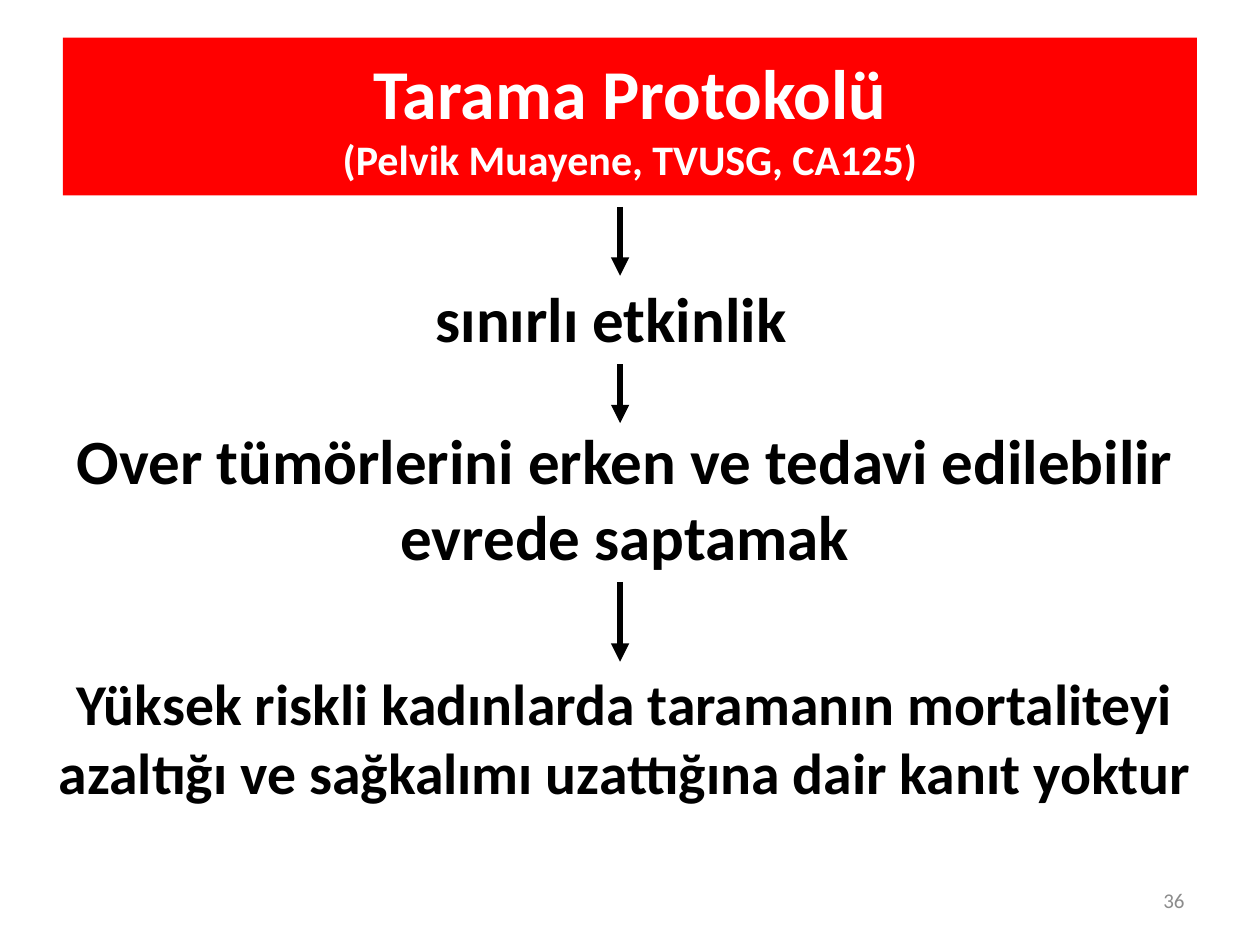
"""Build the screening protocol slide: a red title and three statements linked by arrows."""
from lxml.etree import SubElement
from pptx import Presentation
from pptx.dml.color import RGBColor
from pptx.enum.shapes import MSO_CONNECTOR, MSO_SHAPE
from pptx.enum.text import MSO_ANCHOR, PP_ALIGN
from pptx.oxml.ns import qn
from pptx.util import Cm, Pt


def color(value):
    return RGBColor.from_string(value)


def write(shape, *lines, sizes, font_color="000000", align=PP_ALIGN.CENTER, anchor=MSO_ANCHOR.TOP, bold=True):
    frame = shape.text_frame
    frame.word_wrap = True
    frame.vertical_anchor = anchor
    paragraph = frame.paragraphs[0]
    paragraph.alignment = align
    for index, (line, size) in enumerate(zip(lines, sizes)):
        if index:
            paragraph.add_line_break()
        run = paragraph.add_run()
        run.text = line
        run.font.name = "Calibri"
        run.font.size = Pt(size)
        run.font.bold = bold
        run.font.color.rgb = color(font_color)


presentation = Presentation()
presentation.slide_width = Cm(25.4)
presentation.slide_height = Cm(19.05)
slide = presentation.slides.add_slide(presentation.slide_layouts[6])

title = slide.shapes.add_shape(MSO_SHAPE.RECTANGLE, Cm(1.27), Cm(0.76), Cm(22.86), Cm(3.18))
title.shadow.inherit = False
title.fill.solid()
title.fill.fore_color.rgb = color("FF0000")
title.line.fill.background()
write(title, "Tarama Protokolü", "(Pelvik Muayene, TVUSG, CA125)",
      sizes=(40, 24), font_color="FFFFFF", anchor=MSO_ANCHOR.MIDDLE)

statements = [
    ("sınırlı etkinlik", 8.53, 5.51, 7.98, 1.8, 36, PP_ALIGN.LEFT),
    ("Over tümörlerini erken ve tedavi edilebilir evrede saptamak",
     0.79, 8.38, 23.62, 3.33, 36, PP_ALIGN.CENTER),
    ("Yüksek riskli kadınlarda taramanın mortaliteyi azaltığı ve sağkalımı uzattığına dair kanıt yoktur",
     0.79, 13.34, 23.62, 3.07, 33, PP_ALIGN.CENTER),
]
for text, left, top, width, height, size, align in statements:
    statement = slide.shapes.add_textbox(Cm(left), Cm(top), Cm(width), Cm(height))
    write(statement, text, sizes=(size,), align=align)

arrow_x = Cm(12.5)
for start, end in [(4.17, 5.56), (7.34, 8.53), (11.73, 13.34)]:
    arrow = slide.shapes.add_connector(MSO_CONNECTOR.STRAIGHT, arrow_x, Cm(start), arrow_x, Cm(end))
    arrow.line.width = Pt(3.5)
    arrow.line.color.rgb = color("000000")
    SubElement(arrow.line._get_or_add_ln(), qn("a:tailEnd"), type="triangle")
    SubElement(arrow._element.spPr, qn("a:effectLst"))

slide_number = slide.shapes.add_textbox(Cm(18.2), Cm(17.65), Cm(5.93), Cm(1.01))
write(slide_number, "36", sizes=(12,), font_color="8C8C8C",
      align=PP_ALIGN.RIGHT, anchor=MSO_ANCHOR.MIDDLE, bold=False)

presentation.save("out.pptx")
